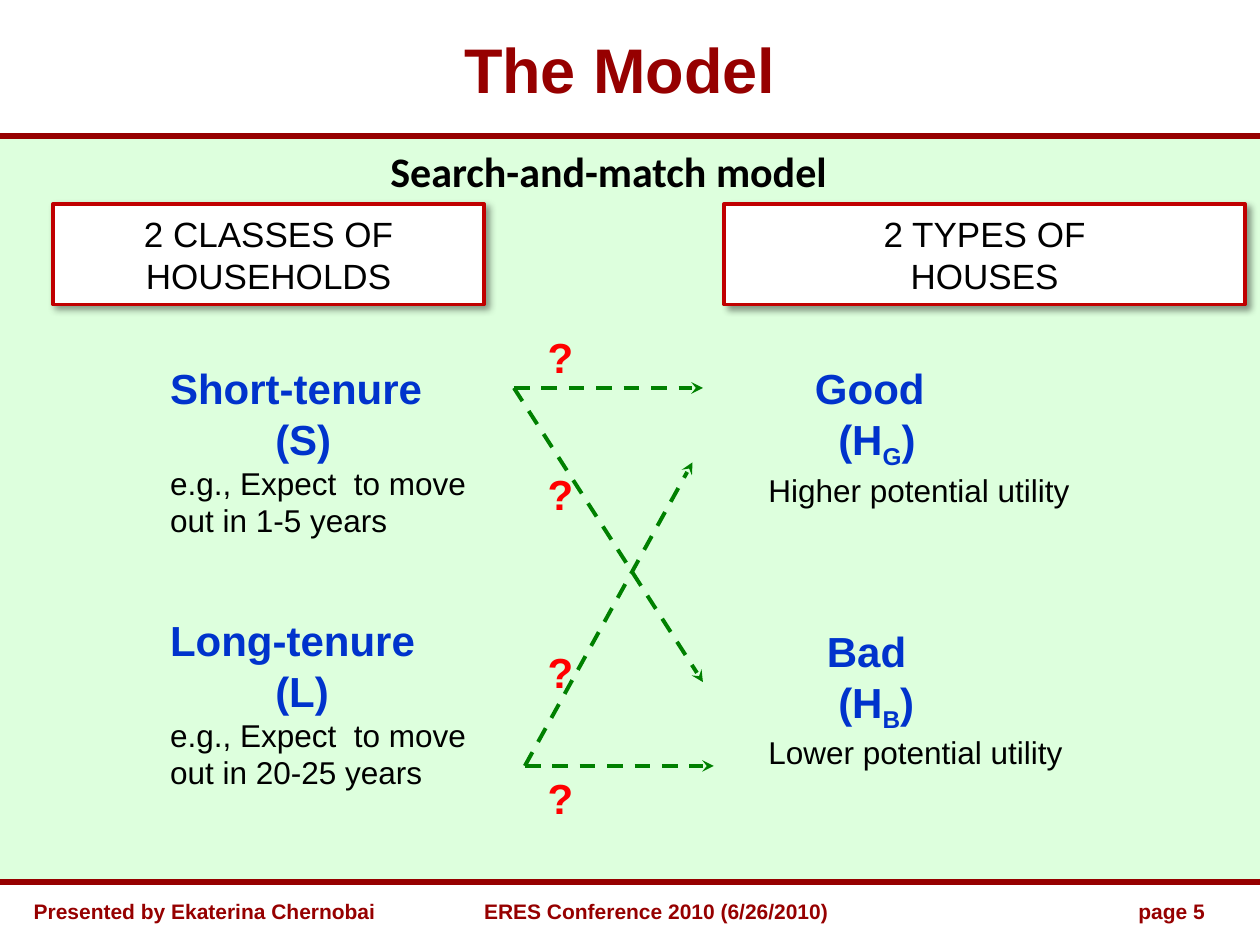
from lxml import etree
from pptx import Presentation
from pptx.dml.color import RGBColor
from pptx.enum.dml import MSO_LINE
from pptx.enum.shapes import MSO_CONNECTOR, MSO_SHAPE
from pptx.enum.text import MSO_ANCHOR, PP_ALIGN
from pptx.oxml.ns import qn
from pptx.util import Cm, Pt

LEFT, CENTER, RIGHT = PP_ALIGN.LEFT, PP_ALIGN.CENTER, PP_ALIGN.RIGHT
MIDDLE = MSO_ANCHOR.MIDDLE
RECTANGLE = MSO_SHAPE.RECTANGLE
STRAIGHT = MSO_CONNECTOR.STRAIGHT
DASH = MSO_LINE.DASH

COLORS = {
    "panel": "DDFFDD", "maroon": "960000", "card": "FFFFFF", "border": "C00000",
    "group": "0033CC", "text": "000000", "arrow": "008000", "question": "FF0000",
}
SLIDE_W, SLIDE_H = 25.4, 19.05
PANEL_TOP, PANEL_BOTTOM = 2.74, 17.78


def color(name):
    return RGBColor.from_string(COLORS[name])


def format_runs(paragraph, size, color_name, bold=False, font="Arial"):
    for run in paragraph.runs:
        run.font.name = font
        run.font.size = Pt(size)
        run.font.bold = bold
        run.font.color.rgb = color(color_name)


def add_text(slide, box, text, size, color_name, align=LEFT, font="Arial"):
    label = slide.shapes.add_textbox(*map(Cm, box))
    label.text_frame.word_wrap = True
    label.text_frame.text = text
    paragraph = label.text_frame.paragraphs[0]
    paragraph.alignment = align
    format_runs(paragraph, size, color_name, True, font)


def add_line(slide, start, end, color_name, width):
    line = slide.shapes.add_connector(STRAIGHT, *map(Cm, start + end))
    line.line.color.rgb = color(color_name)
    line.line.width = Pt(width)
    etree.SubElement(line._element.spPr, qn("a:effectLst"))
    return line


def add_arrow(slide, start, end):
    arrow = add_line(slide, start, end, "arrow", 2.25)
    arrow.line.dash_style = DASH
    etree.SubElement(arrow.line._get_or_add_ln(), qn("a:tailEnd"), type="stealth")


def add_panel(slide, left, top, width, height):
    panel = slide.shapes.add_shape(RECTANGLE, Cm(left), Cm(top), Cm(width), Cm(height))
    panel.shadow.inherit = False
    panel.fill.solid()
    panel.fill.fore_color.rgb = color("panel")
    panel.line.fill.background()
    for y in (top, top + height):
        add_line(slide, (left, y), (left + width, y), "maroon", 3)


def set_title(slide, box, text):
    title = slide.shapes.title
    title.left, title.top, title.width, title.height = map(Cm, box)
    title.text_frame.text = text
    title.text_frame.vertical_anchor = MIDDLE
    paragraph = title.text_frame.paragraphs[0]
    paragraph.alignment = CENTER
    format_runs(paragraph, 36, "maroon", True)


def add_card_shadow(card):
    card.shadow.inherit = False
    effects = card._element.spPr.find(qn("a:effectLst"))
    shadow = etree.SubElement(effects, qn("a:outerShdw"), blurRad=str(Pt(4)),
                              dist=str(Pt(3)), dir="2700000", algn="tl", rotWithShape="0")
    shade = etree.SubElement(shadow, qn("a:srgbClr"), val=COLORS["text"])
    etree.SubElement(shade, qn("a:alpha"), val="40000")


def add_card(slide, box, text):
    card = slide.shapes.add_shape(RECTANGLE, *map(Cm, box))
    add_card_shadow(card)
    card.fill.solid()
    card.fill.fore_color.rgb = color("card")
    card.line.color.rgb = color("border")
    card.line.width = Pt(2)
    card.text_frame.word_wrap = True
    card.text_frame.vertical_anchor = MIDDLE
    card.text_frame.text = text
    for paragraph in card.text_frame.paragraphs:
        paragraph.alignment = CENTER
        format_runs(paragraph, 20, "text")


def add_group(slide, box, name, symbol, notes, indents):
    """Name and symbol with their indents in cm; symbol is (start, subscript, end)."""
    frame = slide.shapes.add_textbox(*map(Cm, box)).text_frame
    frame.word_wrap = True
    frame.text = "\n".join([name, "", *notes])
    heading, symbol_line, *note_lines = frame.paragraphs
    for part in filter(None, symbol):
        symbol_line.add_run().text = part
    for paragraph, indent in zip((heading, symbol_line), indents):
        format_runs(paragraph, 24, "group", True)
        paragraph._p.get_or_add_pPr().set("marL", str(Cm(indent)))
    if symbol[1]:
        symbol_line.runs[1].font._element.set("baseline", "-25000")
    for paragraph in note_lines:
        format_runs(paragraph, 18, "text")


def add_households(slide, left, top, width, height):
    step = 5.08
    groups = [("Short-tenure", "(S)", "out in 1-5 years"),
              ("Long-tenure", "(L)", "out in 20-25 years")]
    for i, (name, symbol, years) in enumerate(groups):
        add_group(slide, (left, top + i * step, width, height), name, (symbol, "", ""),
                  ["e.g., Expect  to move", years], (0, 2.12))


def add_houses(slide, left, top, width, height):
    step = 5.3
    groups = [("Good", "G", "Higher potential utility", 0.94),
              ("Bad", "B", "Lower potential utility", 1.18)]
    for i, (name, subscript, utility, indent) in enumerate(groups):
        add_group(slide, (left, top + i * step, width, height), name,
                  ("(H", subscript, ")"), [utility], (indent, 1.41))


def add_matching(slide, left, top):
    short, long = (0, 1.27), (0.22, 8.89)
    matches = [(short, (3.81, 7.2)), (short, (3.81, 1.27)),
               (long, (3.6, 2.77)), (long, (4.03, 8.89))]
    for start, end in matches:
        add_arrow(slide, (left + start[0], top + start[1]), (left + end[0], top + end[1]))
    for y in (0, 2.77, 6.35, 8.89):
        add_text(slide, (left + 0.43, top + y, 1.27, 1.27), "?", 24, "question")


def add_footer(slide, top, height):
    parts = [(0.43, 8.05, "Presented by Ekaterina Chernobai", LEFT),
             (8.15, 10.16, "ERES Conference 2010 (6/26/2010)", CENTER),
             (19.89, 4.65, "page 5", RIGHT)]
    for left, width, text, align in parts:
        add_text(slide, (left, top, width, height), text, 12, "maroon", align)


def main():
    deck = Presentation()
    deck.slide_width, deck.slide_height = Cm(SLIDE_W), Cm(SLIDE_H)
    slide = deck.slides.add_slide(deck.slide_layouts[5])

    add_panel(slide, 0, PANEL_TOP, SLIDE_W, PANEL_BOTTOM - PANEL_TOP)
    set_title(slide, (0.43, 0.43, 24.13, 1.9), "The Model")
    add_text(slide, (7.62, 2.8, 9.53, 1.27), "Search-and-match model", 24, "text",
             font="Calibri")
    add_card(slide, (1.07, 4.11, 8.69, 2.03), "2 CLASSES OF HOUSEHOLDS")
    add_card(slide, (14.6, 4.11, 10.5, 2.03), "2 TYPES OF\nHOUSES")
    add_households(slide, 3.18, 7.19, 6.55, 3.8)
    add_houses(slide, 15.24, 7.19, 7.42, 3.2)
    add_matching(slide, 10.36, 6.55)
    add_footer(slide, 17.98, 0.69)

    deck.save("out.pptx")


if __name__ == "__main__":
    main()
